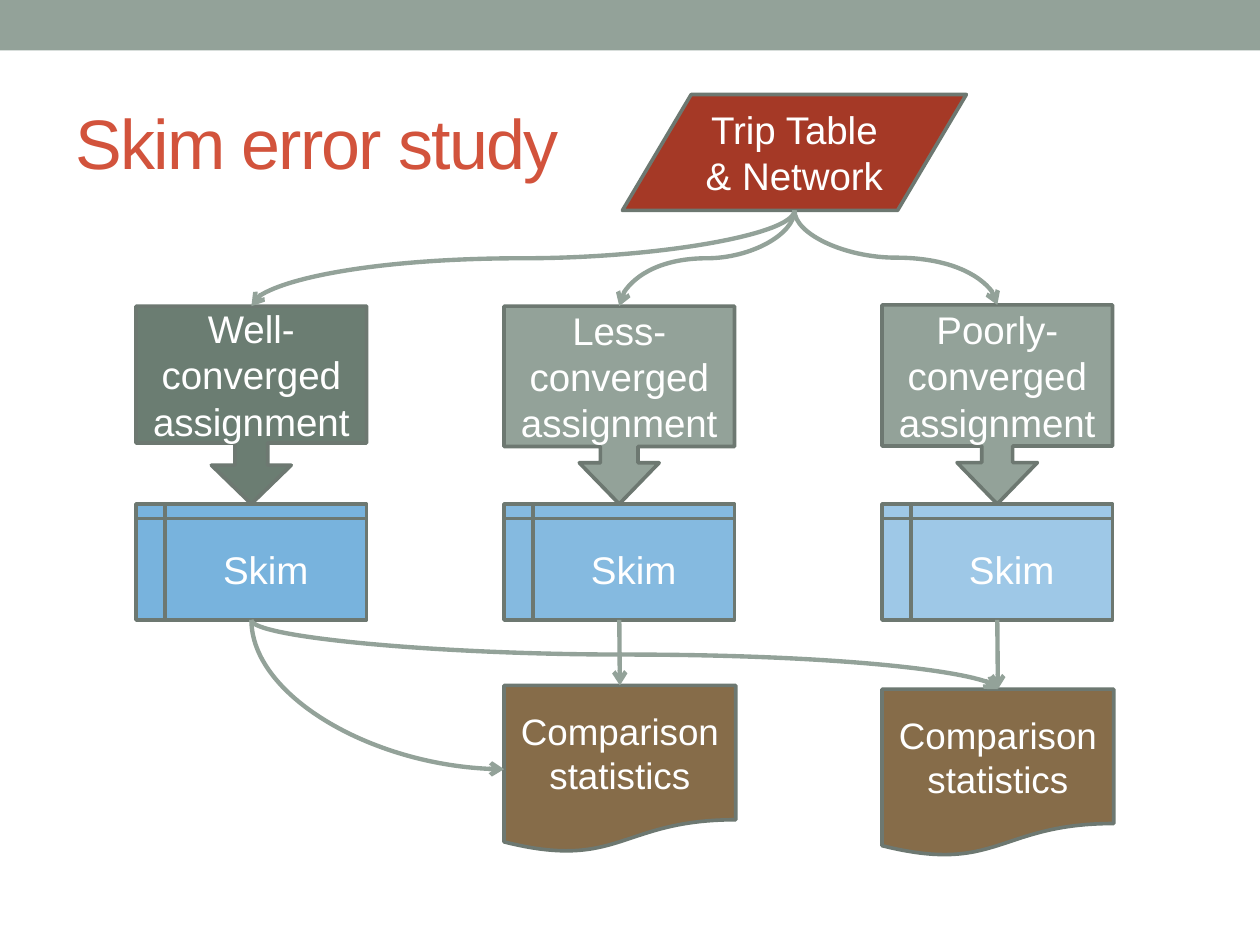
"""Build the skim error study flow chart slide."""
from lxml.etree import SubElement
from pptx import Presentation
from pptx.dml.color import RGBColor
from pptx.enum.shapes import MSO_CONNECTOR as Link, MSO_SHAPE as Shape
from pptx.enum.text import MSO_ANCHOR as Anchor, PP_ALIGN as Align
from pptx.oxml.ns import qn
from pptx.util import Pt

PX = 9144
COLORS = {"sage": "93A299", "title": "D2533C", "moss": "6B7D72", "edge": "6D7871",
          "blue": "0070C0", "brown": "866C49", "red": "A53926", "white": "FFFFFF"}
BAND = (0, 0, 1000, 40)
TITLE = ("Skim error study", (50, 58, 900, 108))
SOURCE = ("Trip Table & Network", (494, 75, 273, 92))
WIDTH, SKIM_TOP, SKIM_HEIGHT = 183, 400, 92
DOCUMENT_SIZE = (184, 133)
COLUMNS = [
    {"left": 108, "top": 243, "text": "Well-converged assignment", "fill": "moss",
     "adjust": (0.166, 0.202, 0.196, 0.692), "alpha": 53, "document": None},
    {"left": 400, "top": 243, "text": "Less-converged assignment", "fill": "sage",
     "adjust": (0.19, 0.202, 0.208, 0.71), "alpha": 48, "document": 544},
    {"left": 700, "top": 242, "text": "Poorly-converged assignment", "fill": "sage",
     "adjust": (0.155, 0.202, 0.208, 0.709), "alpha": 38, "document": 547},
]


def emu(lengths):
    return [round(length * PX) for length in lengths]


def color(name):
    return RGBColor.from_string(COLORS[name])


def write(box, text, size, ink="white", align=Align.CENTER):
    frame = box.text_frame
    for name, value in {"word_wrap": True, "vertical_anchor": Anchor.MIDDLE}.items():
        setattr(frame, name, value)
    para = frame.paragraphs[0]
    para.alignment = align
    span = para.add_run()
    span.text = text
    for name, value in {"name": "Arial", "size": Pt(size)}.items():
        setattr(span.font, name, value)
    span.font.color.rgb = color(ink)
    return span


def add_box(page, kind, place, fill, text="", size=22, alpha=None, adjust=()):
    box = page.shapes.add_shape(kind, *emu(place))
    box.shadow.inherit = False
    box.fill.solid()
    box.fill.fore_color.rgb = color(fill)
    for index, value in enumerate(adjust):
        box.adjustments[index] = value
    if alpha:
        tint = box.fill._xPr.find(qn("a:solidFill"))[0]
        SubElement(tint, qn("a:alpha")).set("val", str(alpha * 1000))
    if text:
        box.line.color.rgb = color("edge")
        box.line.width = Pt(2.08)
        write(box, text, size)
    else:
        box.line.fill.background()
    return box


def add_arrow(page, kind, start, end):
    arrow = page.shapes.add_connector(kind, *emu(start + end))
    arrow.line.color.rgb = color("sage")
    arrow.line.width = Pt(2.5)
    SubElement(arrow.line._get_or_add_ln(), qn("a:tailEnd")).set("type", "arrow")
    SubElement(arrow._element.spPr, qn("a:effectLst"))
    return arrow


def add_curve(page, start, end, preset="curvedConnector3"):
    (x1, y1), (x2, y2) = start, end
    across, down = abs(x2 - x1), abs(y2 - y1)
    left, top = (x1 + x2 - down) / 2, (y1 + y2 - across) / 2
    arrow = add_arrow(page, Link.CURVE, (left, top), (left + down, top + across))
    properties = arrow._element.spPr
    properties.find(qn("a:prstGeom")).set("prst", preset)
    frame = properties.find(qn("a:xfrm"))
    rightward = x2 > x1
    frame.set("rot", str((270 if rightward else 90) * 60000))
    if rightward:
        frame.set("flipH", "1")


def main():
    deck = Presentation()
    deck.slide_width, deck.slide_height = emu((1000, 750))
    page = deck.slides.add_slide(deck.slide_layouts[6])
    add_box(page, Shape.RECTANGLE, BAND, "sage")
    text, place = TITLE
    heading = write(page.shapes.add_textbox(*emu(place)), text, 40, "title", Align.LEFT)
    heading._r.get_or_add_rPr().set("spc", "-100")

    documents = []
    for column in COLUMNS:
        left, top = column["left"], column["top"]
        add_box(page, Shape.DOWN_ARROW_CALLOUT, (left, top, WIDTH, SKIM_TOP - top),
                column["fill"], column["text"], adjust=column["adjust"])
        skim = add_box(page, Shape.FLOWCHART_INTERNAL_STORAGE,
                       (left, SKIM_TOP, WIDTH, SKIM_HEIGHT), "blue", "Skim",
                       alpha=column["alpha"])
        if column["document"]:
            place = (left, column["document"], *DOCUMENT_SIZE)
            document = add_box(page, Shape.FLOWCHART_DOCUMENT, place, "brown",
                               "Comparison statistics", 21)
            documents.append((place, skim, document))

    for place, skim, document in documents:
        middle = place[0] + WIDTH / 2
        arrow = add_arrow(page, Link.STRAIGHT, (middle, SKIM_TOP + SKIM_HEIGHT),
                          (middle, place[1]))
        arrow.begin_connect(skim, 2)
        arrow.end_connect(document, 0)

    skim_foot = (COLUMNS[0]["left"] + WIDTH / 2, SKIM_TOP + SKIM_HEIGHT)
    near, far = [place for place, _, _ in documents]
    add_curve(page, skim_foot, (far[0] + far[2] / 2, far[1]))
    add_curve(page, skim_foot, (near[0], near[1] + near[3] / 2), "curvedConnector2")

    text, place = SOURCE
    add_box(page, Shape.FLOWCHART_DATA, place, "red", text)
    source_foot = (place[0] + place[2] / 2, place[1] + place[3])
    for column in COLUMNS:
        add_curve(page, source_foot, (column["left"] + WIDTH / 2, column["top"]))
    deck.save("out.pptx")


if __name__ == "__main__":
    main()
